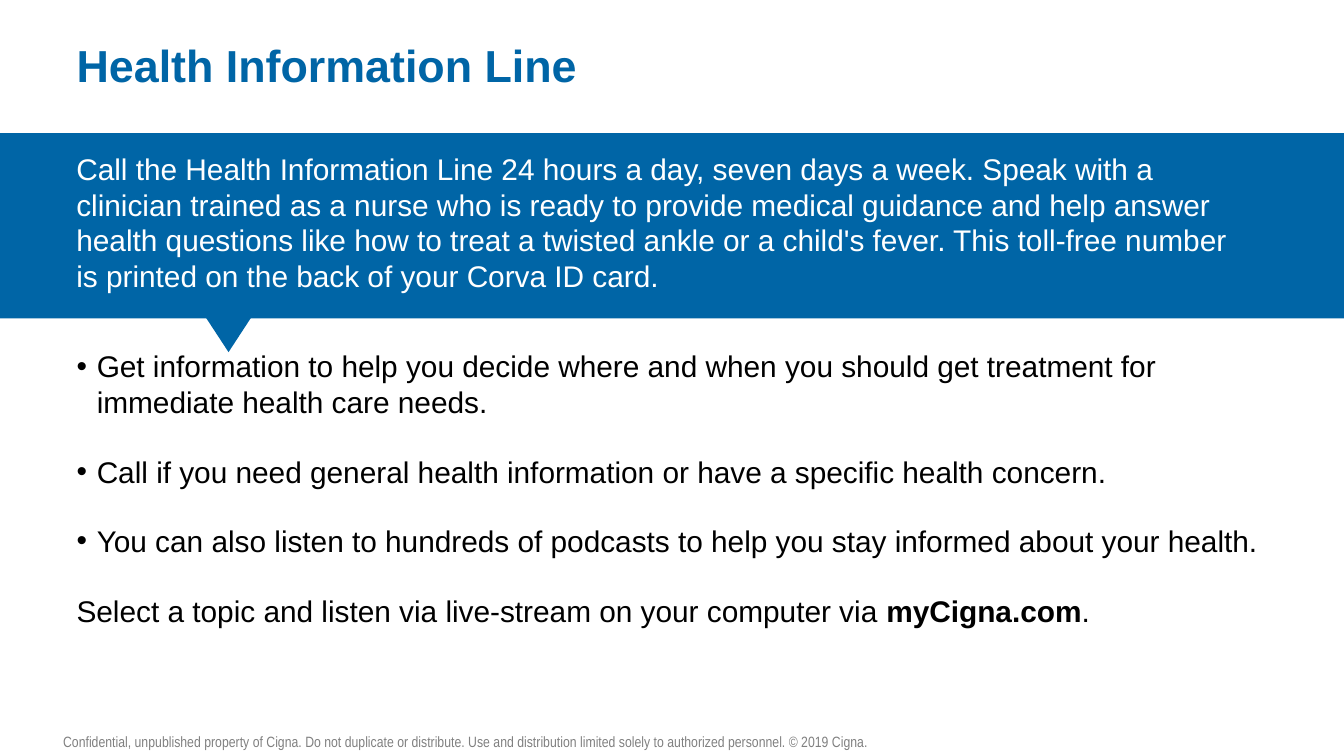
import pptx
import pptx.dml.color
import pptx.enum.shapes
import pptx.enum.text
import pptx.oxml
import pptx.util
from pptx.util import Inches

BLUE = "0065A6"
BLACK = "000000"
WHITE = "FFFFFF"
GRAY = "808080"
LEFT = 0.47

TITLE = "Health Information Line"
CALLOUT = (
    "Call the Health Information Line 24 hours a day, seven days a week. "
    "Speak with a clinician trained as a nurse who is ready to provide medical "
    "guidance and help answer health questions like how to treat a twisted ankle "
    "or a child's fever. This toll-free number is printed on the back of your "
    "Corva ID card."
)
BENEFITS = [
    "Get information to help you decide where and when you should get treatment "
    "for immediate health care needs.",
    "Call if you need general health information or have a specific health concern.",
    "You can also listen to hundreds of podcasts to help you stay informed about "
    "your health.",
]
CLOSING = [
    ("Select a topic and listen via live-stream on your computer via ", False),
    ("myCigna.com", True),
    (".", False),
]
FOOTER = (
    "Confidential, unpublished property of Cigna. Do not duplicate or distribute. "
    "Use and distribution limited solely to authorized personnel. © 2019 Cigna."
)


def color(hex_value):
    return pptx.dml.color.RGBColor.from_string(hex_value)


def set_font(paragraph, size, hex_value, name="Arial", bold=None):
    font = paragraph.font
    font.name = name
    font.size = pptx.util.Pt(size)
    font.color.rgb = color(hex_value)
    font.bold = bold


def place(shape, left, top, width, height):
    shape.left, shape.top = Inches(left), Inches(top)
    shape.width, shape.height = Inches(width), Inches(height)


def set_bullet(paragraph, char=None, indent=0.0):
    """Give the paragraph a hanging bullet, or none when char is missing."""
    properties = paragraph._p.get_or_add_pPr()
    properties.set("marL", str(Inches(indent)))
    properties.set("indent", str(-Inches(indent)))
    namespace = pptx.oxml.ns.nsdecls("a")
    if char:
        marks = [
            f'<a:buClr {namespace}><a:srgbClr val="{BLACK}"/></a:buClr>',
            f'<a:buFont {namespace} typeface="Arial"/>',
            f'<a:buChar {namespace} char="{char}"/>',
        ]
    else:
        marks = [f"<a:buNone {namespace}/>"]
    for mark in marks:
        properties.append(pptx.oxml.parse_xml(mark))


def fill_title(title, left, top, width, height):
    place(title, left, top, width, height)
    frame = title.text_frame
    frame.text = TITLE
    frame.auto_size = pptx.enum.text.MSO_AUTO_SIZE.NONE
    frame.vertical_anchor = pptx.enum.text.MSO_ANCHOR.TOP
    paragraph = frame.paragraphs[0]
    paragraph.alignment = pptx.enum.text.PP_ALIGN.LEFT
    set_font(paragraph, 24, BLUE, bold=True)


def add_blue_shape(slide, kind, left, top, width, height):
    shape = slide.shapes.add_shape(
        kind, Inches(left), Inches(top), Inches(width), Inches(height)
    )
    shape.shadow.inherit = False
    shape.fill.solid()
    shape.fill.fore_color.rgb = color(BLUE)
    shape.line.fill.background()
    return shape


def add_callout(slide, left, top, width, height):
    """Draw the band with its pointer and text."""
    kinds = pptx.enum.shapes.MSO_SHAPE
    add_blue_shape(slide, kinds.RECTANGLE, left, top, width, height)
    pointer = add_blue_shape(
        slide, kinds.ISOSCELES_TRIANGLE, left + 1.51, top + height - 0.04, 0.38, 0.29
    )
    pointer.rotation = 180

    message = slide.shapes.add_textbox(
        Inches(left + LEFT), Inches(top + 0.08), Inches(8.94), Inches(1.18)
    )
    frame = message.text_frame
    frame.word_wrap = True
    frame.auto_size = pptx.enum.text.MSO_AUTO_SIZE.SHAPE_TO_FIT_TEXT
    frame.text = CALLOUT
    set_font(frame.paragraphs[0], 16, WHITE)


def fill_benefits(body, left, top, width, height):
    place(body, left, top, width, height)
    frame = body.text_frame
    frame.auto_size = pptx.enum.text.MSO_AUTO_SIZE.NONE
    frame.text = "\n".join(BENEFITS)
    for paragraph in frame.paragraphs:
        set_bullet(paragraph, "•", 0.15)

    closing = frame.add_paragraph()
    set_bullet(closing)
    for text, bold in CLOSING:
        run = closing.add_run()
        run.text = text
        run.font.bold = bold

    for paragraph in frame.paragraphs:
        paragraph.space_before = pptx.util.Pt(0)
        paragraph.space_after = pptx.util.Pt(18)
        set_font(paragraph, 16, BLACK)


def add_footer(slide, left, top, width, height):
    footer = slide.shapes.add_textbox(
        Inches(left), Inches(top), Inches(width), Inches(height)
    )
    frame = footer.text_frame
    frame.margin_left = frame.margin_right = 0
    frame.margin_top = frame.margin_bottom = 0
    frame.word_wrap = False
    frame.auto_size = pptx.enum.text.MSO_AUTO_SIZE.SHAPE_TO_FIT_TEXT
    frame.text = FOOTER
    set_font(frame.paragraphs[0], 8, GRAY, name="Arial Narrow")


def main():
    presentation = pptx.Presentation()
    presentation.slide_width = Inches(10)
    presentation.slide_height = presentation.slide_width * 9 // 16
    slide = presentation.slides.add_slide(presentation.slide_layouts[1])

    fill_title(slide.shapes.title, LEFT, 0.23, 9, 0.53)
    add_callout(slide, 0, 0.99, 10, 1.38)
    fill_benefits(slide.placeholders[1], LEFT, 2.54, 9.06, 1.85)
    add_footer(slide, LEFT, 5.45, 6.04, 0.13)

    presentation.save("out.pptx")


if __name__ == "__main__":
    main()
